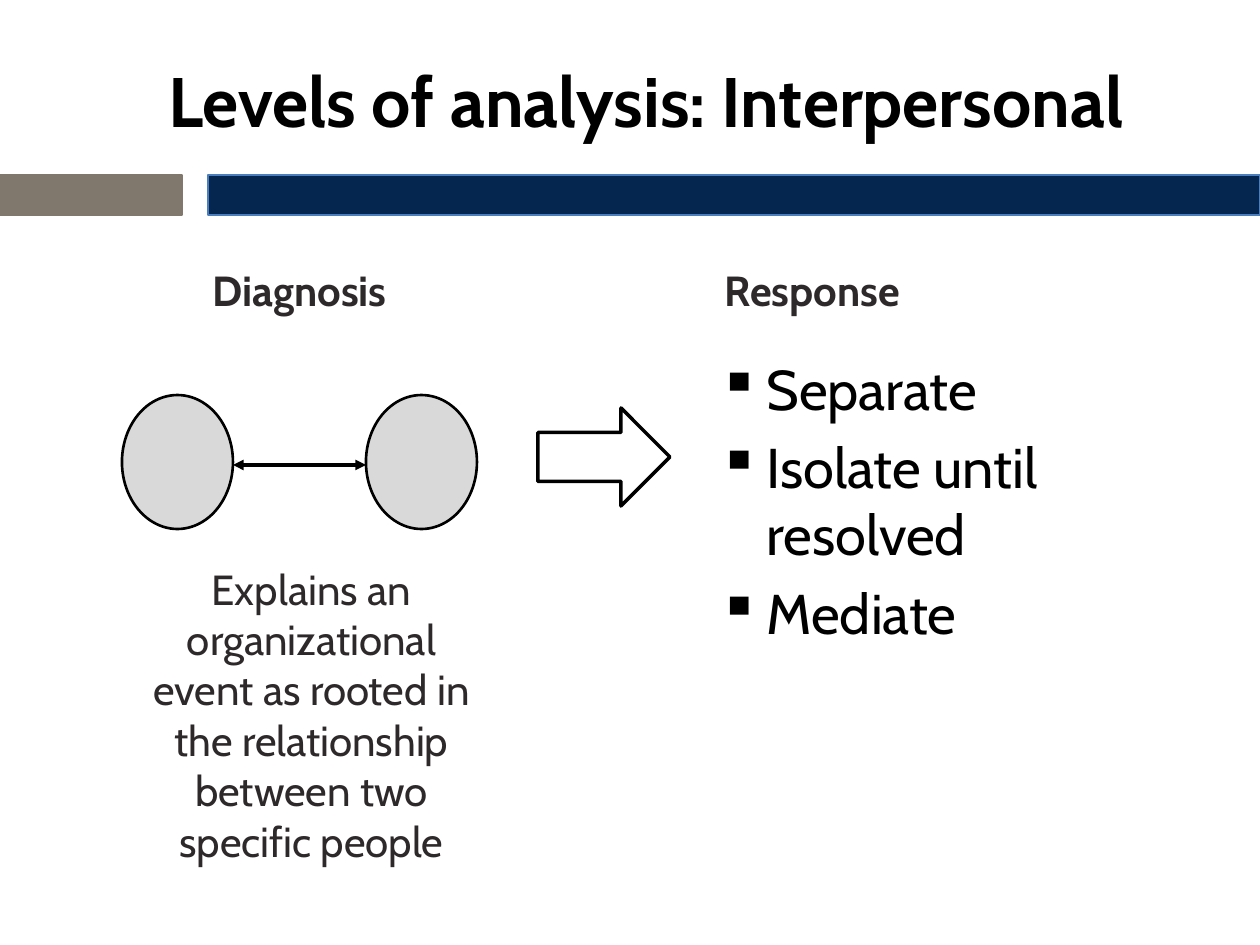
import pptx
import pptx.util
from pptx.dml.color import RGBColor
from pptx.enum.shapes import MSO_CONNECTOR, MSO_SHAPE
from pptx.enum.text import MSO_ANCHOR, PP_ALIGN
from pptx.oxml.ns import qn
from lxml import etree

PX_PER_INCH = 126
COLORS = {
    "black": "000000", "white": "FFFFFF", "text": "2D2829", "taupe": "81786D",
    "navy": "05264F", "blue": "4B7EBC", "gray": "D9D9D9",
}


def px(n):
    return pptx.util.Emu(round(n * 914400 / PX_PER_INCH))


def rgb(name):
    return RGBColor.from_string(COLORS[name])


class SlideBuilder:
    font = "Cabin"

    def __init__(self, prs):
        self.s = prs.slides.add_slide(prs.slide_layouts[6])

    def shape(self, kind, x, y, w, h, fill, line, weight):
        sp = self.s.shapes.add_shape(kind, px(x), px(y), px(w), px(h))
        sp.shadow.inherit = False
        sp.fill.solid()
        sp.fill.fore_color.rgb = rgb(fill)
        sp.line.color.rgb = rgb(line)
        sp.line.width = pptx.util.Pt(weight)

    def double_arrow(self, x1, x2, y, color, weight):
        sp = self.s.shapes.add_connector(MSO_CONNECTOR.STRAIGHT, px(x1), px(y), px(x2), px(y))
        sp.line.color.rgb = rgb(color)
        sp.line.width = pptx.util.Pt(weight)
        ln = sp.line._get_or_add_ln()
        for end in ("a:headEnd", "a:tailEnd"):
            etree.SubElement(ln, qn(end), type="triangle")
        etree.SubElement(sp._element.spPr, qn("a:effectLst"))

    def text(self, x, y, w, h, lines, size, color="text", bold=False,
             align=PP_ALIGN.CENTER, anchor=MSO_ANCHOR.TOP):
        tf = self.s.shapes.add_textbox(px(x), px(y), px(w), px(h)).text_frame
        tf.word_wrap = True
        tf.vertical_anchor = anchor
        tf.text = "\n".join(lines)
        for p in tf.paragraphs:
            p.alignment = align
            p.font.name = self.font
            p.font.size = pptx.util.Pt(size)
            p.font.bold = bold
            p.font.color.rgb = rgb(color)
        return tf

    def bullets(self, x, y, w, h, lines, size, color, indent):
        tf = self.text(x, y, w, h, lines, size, color, align=PP_ALIGN.LEFT)
        for p in tf.paragraphs:
            p.space_before = pptx.util.Pt(size * 0.2)
            pPr = p._p.get_or_add_pPr()
            pPr.set("marL", str(px(indent)))
            pPr.set("indent", str(-px(indent)))
            bullet = etree.Element(qn("a:buChar"), char="▪")
            pPr.find(qn("a:defRPr")).addprevious(bullet)


def main():
    prs = pptx.Presentation()
    prs.slide_width, prs.slide_height = px(1260), px(945)
    b = SlideBuilder(prs)

    b.shape(MSO_SHAPE.RECTANGLE, 0, 175, 182, 40, "taupe", "taupe", 0.75)
    b.shape(MSO_SHAPE.RECTANGLE, 208, 175, 1052, 40, "navy", "blue", 0.75)
    b.text(84, 32, 1124, 136, ["Levels of analysis: Interpersonal"], 40, "black",
           bold=True, anchor=MSO_ANCHOR.MIDDLE)

    for x, heading in ((98, "Diagnosis"), (611, "Response")):
        b.text(x, 258, 403, 63, [heading], 24, bold=True)

    person_w, left_x, right_x = 111, 122, 366
    for x in (left_x, right_x):
        b.shape(MSO_SHAPE.OVAL, x, 395, person_w, 134, "gray", "black", 1.5)
    b.double_arrow(right_x, left_x + person_w, 465, "black", 2)
    b.text(122, 557, 379, 267,
           ["Explains an organizational event as rooted in the relationship "
            "between two specific people"], 24)

    b.shape(MSO_SHAPE.RIGHT_ARROW, 538, 408, 132, 98, "white", "black", 2)
    b.bullets(706, 348, 537, 234, ["Separate", "Isolate until resolved", "Mediate"],
              32, "black", indent=48)

    prs.save("out.pptx")


if __name__ == "__main__":
    main()
